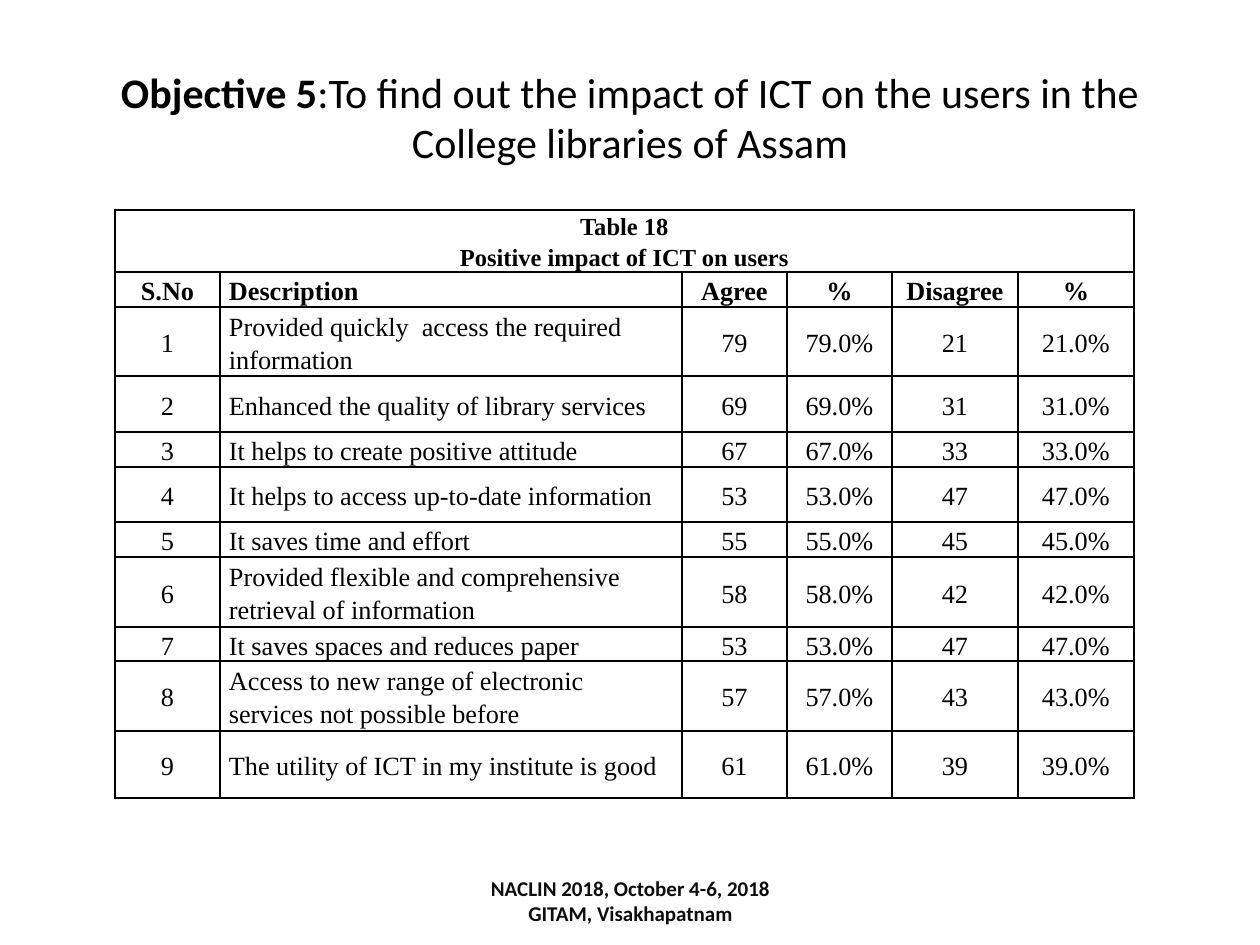
from lxml import etree
from pptx import Presentation
from pptx import util as u
from pptx.dml.color import RGBColor
from pptx.enum import text
from pptx.oxml import ns

SCALE = 914400 / 126
COLORS = {"ink": "000000", "footer": "0D0D0D"}
CENTER, LEFT = text.PP_ALIGN.CENTER, text.PP_ALIGN.LEFT


def px(*lengths):
    return [u.Emu(round(length * SCALE)) for length in lengths]


def style(para, size, font, color, bold, align=CENTER):
    para.alignment = align
    for span in para.runs:
        span.font.size = u.Pt(size)
        span.font.name = font
        span.font.bold = bold
        span.font.color.rgb = RGBColor.from_string(COLORS[color])


deck = Presentation()
deck.slide_width, deck.slide_height = px(1260, 945)
page = deck.slides.add_slide(deck.slide_layouts[5])

title = page.shapes.title
title.left, title.top, title.width, title.height = px(63, 38, 1134, 157)
title.text_frame.vertical_anchor = text.MSO_ANCHOR.MIDDLE
para = title.text_frame.paragraphs[0]
para.add_run().text = "Objective 5"
para.add_run().text = ":To find out the impact of ICT on the users in the College libraries of Assam"
style(para, 24, "Calibri", "ink", False)
para.runs[0].font.bold = True

impacts = [
    ("Provided quickly  access the required information", 79),
    ("Enhanced the quality of library services", 69),
    ("It helps to create positive attitude", 67),
    ("It helps to access up-to-date information", 53),
    ("It saves time and effort", 55),
    ("Provided flexible and comprehensive retrieval of information", 58),
    ("It saves spaces and reduces paper", 53),
    ("Access to new range of electronic services not possible before", 57),
    ("The utility of ICT in my institute is good", 61),
]
rows = [
    ["Table 18\nPositive impact of ICT on users", "", "", "", "", ""],
    ["S.No", "Description", "Agree", "%", "Disagree", "%"],
]
for number, (description, agree) in enumerate(impacts, 1):
    disagree = 100 - agree
    rows.append([str(number), description, str(agree), f"{agree}.0%", str(disagree), f"{disagree}.0%"])

column_widths = [105, 462, 105, 105, 126, 116]
row_heights = [62, 35, 69, 56, 35, 55, 35, 70, 34, 70, 67]
frame = page.shapes.add_table(
    len(rows), len(column_widths), *px(115, 210, sum(column_widths), sum(row_heights))
)
table = frame.table
for column, width in zip(table.columns, px(*column_widths)):
    column.width = width
for row, height in zip(table.rows, px(*row_heights)):
    row.height = height
table.cell(0, 0).merge(table.cell(0, len(column_widths) - 1))

for row_index, values in enumerate(rows):
    for column_index, value in enumerate(values):
        cell = table.cell(row_index, column_index)
        cell.vertical_anchor = text.MSO_ANCHOR.MIDDLE
        cell.margin_left, cell.margin_right, cell.margin_top, cell.margin_bottom = px(9, 9, 0, 0)
        properties = cell._tc.get_or_add_tcPr()
        for side in ("a:lnL", "a:lnR", "a:lnT", "a:lnB"):
            line = etree.SubElement(properties, ns.qn(side), w=str(u.Pt(1)))
            fill = etree.SubElement(line, ns.qn("a:solidFill"))
            etree.SubElement(fill, ns.qn("a:srgbClr"), val=COLORS["ink"])
        cell.fill.background()
        if cell.is_spanned:
            continue
        cell.text_frame.text = value
        align = LEFT if row_index and column_index == 1 else CENTER
        for para in cell.text_frame.paragraphs:
            para.line_spacing = 1.15
            style(para, 15 if row_index else 14, "Times New Roman", "ink", row_index < 2, align)

footer = page.shapes.add_textbox(*px(431, 876, 399, 50))
footer.text_frame.word_wrap = True
footer.text_frame.vertical_anchor = text.MSO_ANCHOR.MIDDLE
footer.text_frame.text = "NACLIN 2018, October 4-6, 2018\nGITAM, Visakhapatnam"
for para in footer.text_frame.paragraphs:
    style(para, 12, "Calibri", "footer", True)

deck.save("out.pptx")
